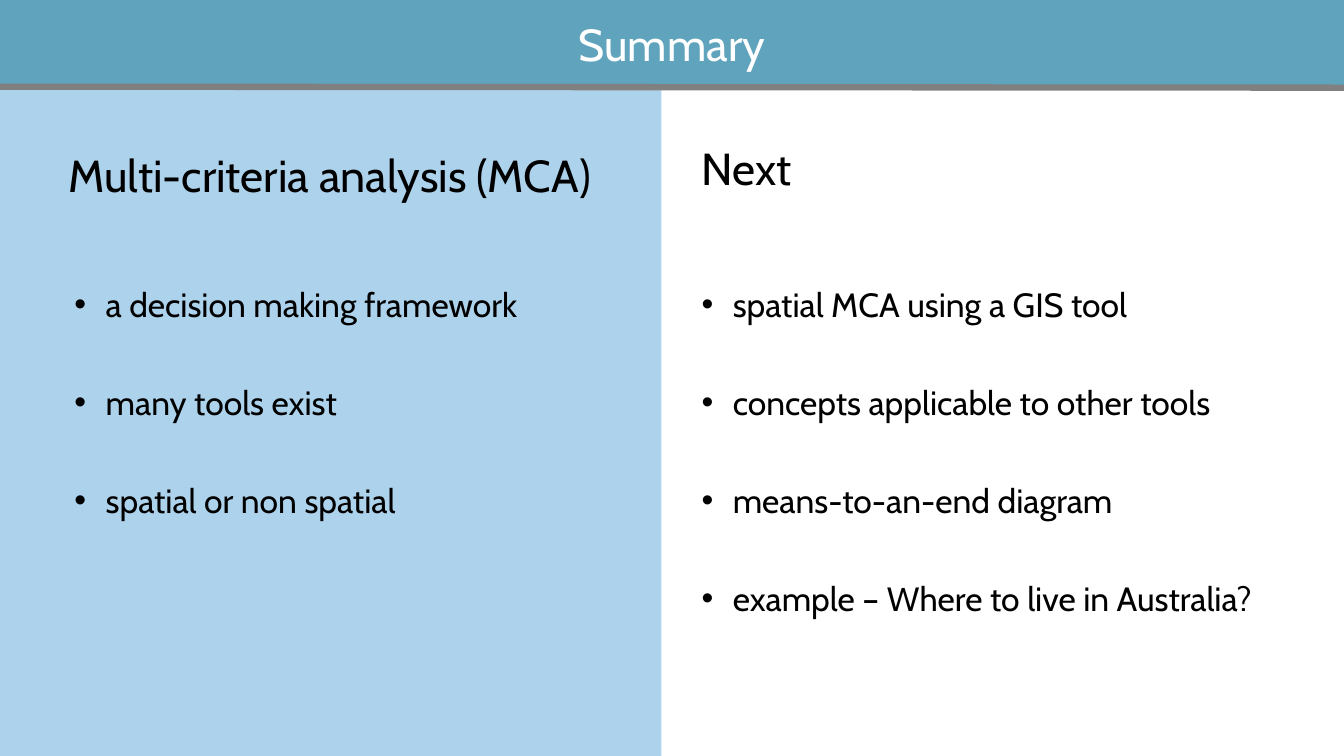
from dataclasses import dataclass

from lxml.etree import SubElement
from pptx import Presentation
from pptx.dml.color import RGBColor
from pptx.enum.shapes import MSO_CONNECTOR, MSO_SHAPE
from pptx.enum.text import MSO_ANCHOR, PP_ALIGN
from pptx.oxml.ns import qn
from pptx.util import Inches, Pt


@dataclass(frozen=True)
class Theme:
    font: str = "Cabin"
    head: int = 32
    body: int = 24
    pitch: int = 35
    rule: float = 4.5
    text: str = "000000"
    light: str = "FFFFFF"
    bar: str = "60A3BC"
    panel: str = "ADD2EB"
    line: str = "808080"


THEME = Theme()
WIDTH, HEIGHT = 13.33, 7.5


def color(code):
    return RGBColor.from_string(code)


def style(para, size, code):
    para.font.name = THEME.font
    para.font.size = Pt(size)
    para.font.color.rgb = color(code)


def add_rect(slide, box, fill):
    shape = slide.shapes.add_shape(MSO_SHAPE.RECTANGLE, *map(Inches, box))
    shape.shadow.inherit = False
    shape.fill.solid()
    shape.fill.fore_color.rgb = color(fill)
    shape.line.fill.background()
    return shape


def add_frame(slide, box):
    frame = slide.shapes.add_textbox(*map(Inches, box)).text_frame
    frame.word_wrap = True
    return frame


def add_bullet(para, indent=0.31):
    props = para._p.get_or_add_pPr()
    props.set("marL", str(Inches(indent)))
    props.set("indent", str(-Inches(indent)))
    SubElement(props, qn("a:buFont")).set("typeface", "Arial")
    SubElement(props, qn("a:buChar")).set("char", "•")


def add_title(slide, box, text):
    """Draw the title bar with the rule along its lower edge."""
    left, top, width, height = box
    frame = add_rect(slide, box, THEME.bar).text_frame
    frame.vertical_anchor = MSO_ANCHOR.MIDDLE
    para = frame.paragraphs[0]
    para.text = text
    para.alignment = PP_ALIGN.CENTER
    style(para, THEME.head, THEME.light)

    base = top + height
    ends = left, base - 0.01, left + width, base
    rule = slide.shapes.add_connector(MSO_CONNECTOR.STRAIGHT, *map(Inches, ends))
    rule.line.color.rgb = color(THEME.line)
    rule.line.width = Pt(THEME.rule)
    SubElement(rule._element.spPr, qn("a:effectLst"))


def add_head(slide, box, text):
    para = add_frame(slide, box).paragraphs[0]
    para.text = text
    para.line_spacing = 0.9
    style(para, THEME.head, THEME.text)


def add_list(slide, box, items):
    frame = add_frame(slide, box)
    for num, item in enumerate(items):
        para = frame.add_paragraph() if num else frame.paragraphs[0]
        para.text = item
        para.line_spacing = Pt(THEME.pitch)
        if num:
            para.space_before = Pt(THEME.pitch)
        add_bullet(para)
        style(para, THEME.body, THEME.text)


def add_column(slide, box, head, items, shift=(0, 0)):
    """Place a heading, moved by shift, above a bullet list."""
    left, top, width, height = box
    right, down = shift
    add_head(slide, (left + right, top + down, width, 0.59), head)
    drop = 1.27
    add_list(slide, (left, top + drop, width, height - drop), items)


def build_summary(slide, box):
    left, top, width, height = box
    add_rect(slide, (left, top, 6.56, height), THEME.panel)
    add_title(slide, (left, top, width, 0.87), "Summary")
    add_column(
        slide,
        (left + 0.64, top + 1.41, 5.8, 3.83),
        "Multi-criteria analysis (MCA)",
        ["a decision making framework", "many tools exist",
         "spatial or non spatial"],
        shift=(-0.06, 0.07),
    )
    add_column(
        slide,
        (left + 6.86, top + 1.41, width - 6.86, 4.81),
        "Next",
        ["spatial MCA using a GIS tool", "concepts applicable to other tools",
         "means-to-an-end diagram", "example – Where to live in Australia?"],
    )


def main():
    deck = Presentation()
    deck.slide_width, deck.slide_height = Inches(WIDTH), Inches(HEIGHT)
    slide = deck.slides.add_slide(deck.slide_layouts[6])
    build_summary(slide, (0, 0, WIDTH, HEIGHT))
    deck.save("out.pptx")


if __name__ == "__main__":
    main()
